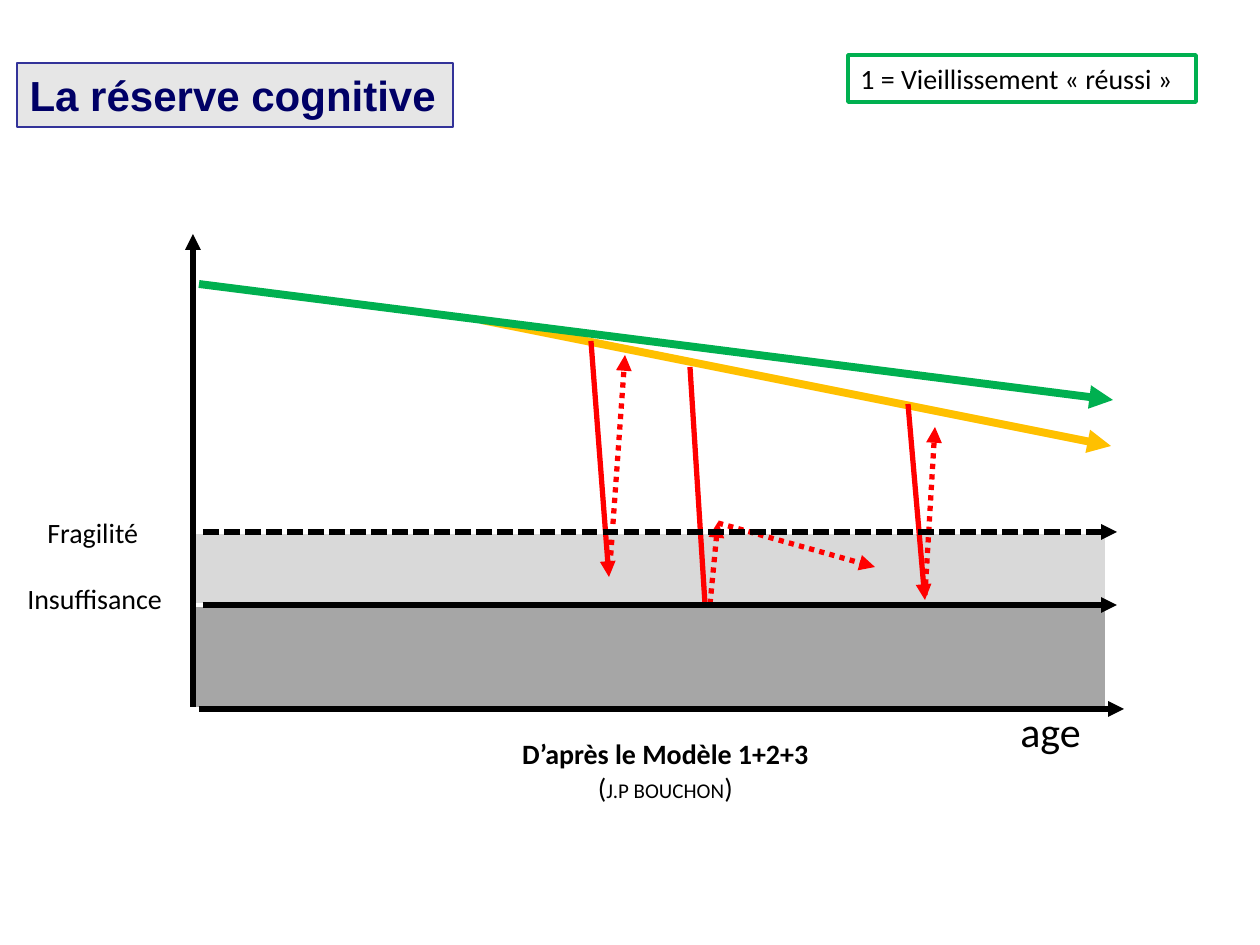
import pptx
import pptx.util
import pptx.dml.color
import pptx.enum.dml
import pptx.enum.shapes
import pptx.enum.text
import pptx.oxml.ns
from lxml import etree

RGB = pptx.dml.color.RGBColor
BLACK = RGB(0x00, 0x00, 0x00)
WHITE = RGB(0xFF, 0xFF, 0xFF)
NAVY = RGB(0x00, 0x00, 0x66)
INDIGO = RGB(0x33, 0x33, 0x99)
PALE_GREY = RGB(0xE6, 0xE6, 0xE6)
LIGHT_GREY = RGB(0xD9, 0xD9, 0xD9)
GREY = RGB(0xA6, 0xA6, 0xA6)
GREEN = RGB(0x00, 0xB0, 0x50)
AMBER = RGB(0xFF, 0xC0, 0x00)
RED = RGB(0xFF, 0x00, 0x00)

DASH = pptx.enum.dml.MSO_LINE
ALIGN = pptx.enum.text.PP_ALIGN
ANCHOR = pptx.enum.text.MSO_ANCHOR
PX_PER_INCH = 126

# Levels shared by the zones and the threshold arrows
FRAGILITY_Y, FAILURE_Y, AXIS_Y = 532, 605, 709


def px(n):
    return pptx.util.Emu(round(n * 914400 / PX_PER_INCH))


def paint(sp, fill=None, line=None, width=0.75):
    if fill is not None:
        sp.fill.solid()
        sp.fill.fore_color.rgb = fill
    if line is not None:
        sp.line.color.rgb = line
        sp.line.width = pptx.util.Pt(width)


def write(p, text, size=16, color=BLACK, name="Calibri", bold=False):
    r = p.add_run()
    r.text = text
    r.font.color.rgb = color
    fmt = {"size": pptx.util.Pt(size), "name": name, "bold": bold}
    for key, value in fmt.items():
        setattr(r.font, key, value)


def text_box(s, x, y, w, h, wrap=True):
    sp = s.shapes.add_textbox(px(x), px(y), px(w), px(h))
    sp.text_frame.word_wrap = wrap
    return sp


def add_title(s, x, y, w, h, text):
    sp = s.shapes.title
    place = {"left": px(x), "top": px(y), "width": px(w), "height": px(h)}
    for key, value in place.items():
        setattr(sp, key, value)
    paint(sp, PALE_GREY, INDIGO)
    tf = sp.text_frame
    tf.word_wrap = False
    tf.vertical_anchor = ANCHOR.MIDDLE
    p = tf.paragraphs[0]
    p.alignment = ALIGN.LEFT
    write(p, text, 24, NAVY, "Arial", True)


def add_zone(s, top, bottom, color):
    sp = s.shapes.add_shape(pptx.enum.shapes.MSO_SHAPE.RECTANGLE,
                            px(193), px(top), px(914), px(bottom - top))
    sp.shadow.inherit = False
    paint(sp, color, WHITE, 2)


def add_arrow(s, x1, y1, x2, y2, color=BLACK, width=3, dash=None):
    c = s.shapes.add_connector(pptx.enum.shapes.MSO_CONNECTOR.STRAIGHT,
                               px(x1), px(y1), px(x2), px(y2))
    paint(c, line=color, width=width)
    if dash is not None:
        c.line.dash_style = dash
    qn = pptx.oxml.ns.qn
    ln = c.line._get_or_add_ln()
    etree.SubElement(ln, qn("a:tailEnd"), type="triangle")
    etree.SubElement(c._element.spPr, qn("a:effectLst"))


def main():
    prs = pptx.Presentation()
    prs.slide_width = pptx.util.Inches(10)
    prs.slide_height = pptx.util.Inches(7.5)
    s = prs.slides.add_slide(prs.slide_layouts[5])
    add_title(s, 17, 63, 436, 64, "La réserve cognitive")

    # Frailty zone and ageing with accidents
    add_zone(s, FRAGILITY_Y, FAILURE_Y, LIGHT_GREY)
    add_arrow(s, 481, 320, 1111, 446, AMBER, 4.5)
    for *ends, dash in [
        (908, 404, 925, 600, None),
        (925, 595, 935, 427, DASH.ROUND_DOT),
        (591, 341, 609, 577, None),
        (610, 566, 625, 355, DASH.ROUND_DOT),
        (690, 367, 708, 651, None),
        (708, 625, 718, 522, DASH.ROUND_DOT),
        (718, 523, 875, 567, DASH.ROUND_DOT),
    ]:
        add_arrow(s, *ends, RED, dash=dash)

    # Failure zone hides the lower end of the middle fall
    add_zone(s, FAILURE_Y, AXIS_Y, GREY)

    # Source of the model
    sp = text_box(s, 406, 732, 525, 77)
    paint(sp, WHITE, WHITE)
    sp.text_frame.vertical_anchor = ANCHOR.MIDDLE
    p = sp.text_frame.paragraphs[0]
    p.alignment = ALIGN.CENTER
    write(p, "D’après le Modèle 1+2+3 ", bold=True)
    p.add_line_break()
    write(p, "(")
    write(p, "J.P BOUCHON", 12)
    write(p, ") ")

    # Axis labels
    for x, y, w, h, text, size in [
        (1008, 699, 199, 63, "age", 24),
        (15, 575, 203, 47, "Insuffisance", 16),
        (35, 509, 203, 47, "Fragilité", 16),
    ]:
        sp = text_box(s, x, y, w, h)
        write(sp.text_frame.paragraphs[0], text, size)

    # Axes and failure threshold
    add_arrow(s, 193, 707, 193, 234)
    add_arrow(s, 199, AXIS_Y, 1124, AXIS_Y)
    add_arrow(s, 203, FAILURE_Y, 1117, FAILURE_Y)

    # Successful ageing
    sp = text_box(s, 848, 55, 348, 47)
    paint(sp, line=GREEN, width=2.25)
    write(sp.text_frame.paragraphs[0], "1 = Vieillissement « réussi »")
    add_arrow(s, 199, 284, 1113, 400, GREEN, 4.5)

    # Frailty threshold
    add_arrow(s, 203, FRAGILITY_Y, 1117, FRAGILITY_Y, dash=DASH.SQUARE_DOT)

    prs.save("out.pptx")


if __name__ == "__main__":
    main()
